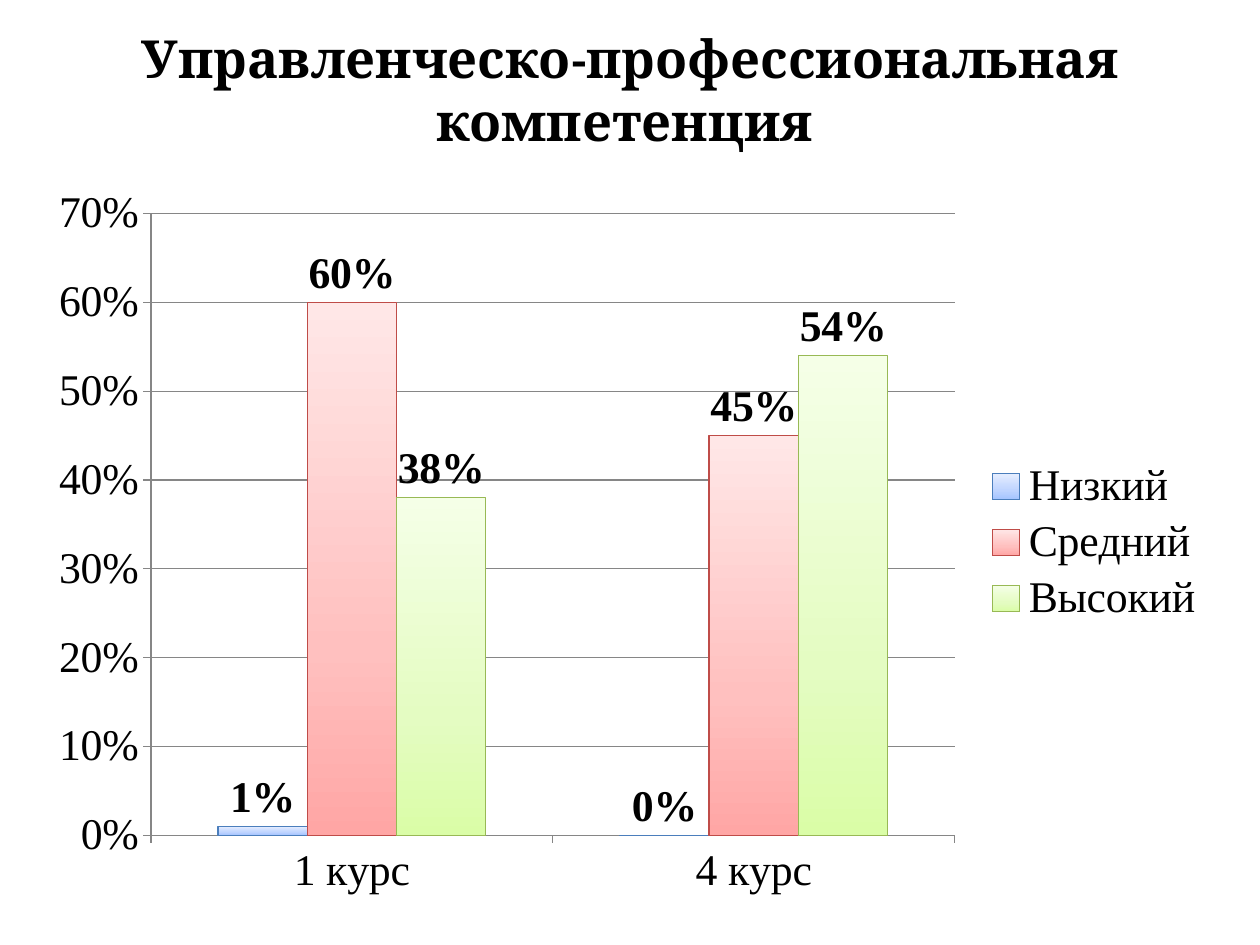
from lxml import etree
from pptx import Presentation
from pptx.chart.data import CategoryChartData
from pptx.dml.color import RGBColor
from pptx.enum.chart import XL_CHART_TYPE, XL_LABEL_POSITION, XL_LEGEND_POSITION, XL_TICK_MARK
from pptx.enum.text import MSO_ANCHOR, PP_ALIGN
from pptx.oxml import parse_xml
from pptx.oxml.ns import nsdecls, qn
from pptx.util import Inches, Pt

COLUMNS = XL_CHART_TYPE.COLUMN_CLUSTERED
RIGHT = XL_LEGEND_POSITION.RIGHT
OUTSIDE_END = XL_LABEL_POSITION.OUTSIDE_END
TICK_OUT = XL_TICK_MARK.OUTSIDE
CENTER = PP_ALIGN.CENTER
MIDDLE = MSO_ANCHOR.MIDDLE

COLORS = {"text": "000000", "back": "FFFFFF", "axis": "868686"}
TITLE = ["Управленческо-профессиональная", "компетенция "]
COURSES = ["1 курс", "4 курс"]
LEVELS = [
    {"name": "Низкий ", "values": (0.01, 0), "line": "4B7EBC",
     "stops": ("A4C4FF", "BFD4FF", "E6EEFF")},
    {"name": "Средний ", "values": (0.6, 0.45), "line": "BF4C48",
     "stops": ("FFA6A5", "FFC0BF", "FFE7E7")},
    {"name": "Высокий", "values": (0.38, 0.54), "line": "98B955",
     "stops": ("DAFDA7", "E4FCC2", "F5FFE7")},
]
STOP_POSITIONS = (0, 35, 100)
LEFT, WIDTH = Inches(0.28), Inches(9.45)


def rgb(name):
    return RGBColor.from_string(COLORS.get(name, name))


def set_font(font, size, name, color="text", bold=False):
    font.size, font.name, font.bold = Pt(size), name, bold
    font.color.rgb = rgb(color)


def add_text(p, text, **fmt):
    r = p.add_run()
    r.text = text
    set_font(r.font, **fmt)


def set_line(line, color):
    line.color.rgb = rgb(color)
    line.width = Pt(0.75)


def set_gradient(series, stops):
    """Fill the columns with a gradient that rises from the first stop."""
    fill = series.format.fill
    fill.gradient()
    fill.gradient_angle = 90
    gs_list = series._element.find(".//" + qn("a:gsLst"))
    for gs in list(gs_list):
        gs_list.remove(gs)
    for position, color in zip(STOP_POSITIONS, stops):
        gs = etree.SubElement(gs_list, qn("a:gs"), pos=str(position * 1000))
        etree.SubElement(gs, qn("a:srgbClr"), val=color)


def add_title(s):
    sp = s.shapes.title
    sp.left, sp.top, sp.width, sp.height = LEFT, Inches(0.15), WIDTH, Inches(1.11)
    sp.fill.solid()
    sp.fill.fore_color.rgb = rgb("back")
    color = sp._element.spPr.find(".//" + qn("a:srgbClr"))
    etree.SubElement(color, qn("a:alpha"), val="70000")
    tf = sp.text_frame
    tf.word_wrap = True
    tf.vertical_anchor = MIDDLE
    for i, text in enumerate(TITLE):
        p = tf.add_paragraph() if i else tf.paragraphs[0]
        p.alignment = CENTER
        add_text(p, text, size=30, name="Cambria", bold=True)


def add_level_chart(s):
    data = CategoryChartData(number_format="0%")
    data.categories = COURSES
    for level in LEVELS:
        data.add_series(level["name"], level["values"])
    chart = s.shapes.add_chart(COLUMNS, LEFT, Inches(1.39), WIDTH, Inches(5.83), data).chart
    set_font(chart.font, 25, "Times New Roman")
    chart.has_title = False
    chart.has_legend = True
    chart.legend.position = RIGHT
    chart.legend.include_in_layout = False

    plot = chart.plots[0]
    plot.gap_width = 150
    plot.overlap = 0
    plot.vary_by_categories = False
    for series, level in zip(plot.series, LEVELS):
        set_gradient(series, level["stops"])
        set_line(series.format.line, level["line"])
        labels = series.data_labels
        labels.show_value = True
        labels.position = OUTSIDE_END
        labels.number_format, labels.number_format_is_linked = "0%", False
        set_font(labels.font, 25, "Times New Roman", bold=True)

    axis = chart.value_axis
    axis.minimum_scale, axis.maximum_scale, axis.major_unit = 0, 0.7, 0.1
    axis.tick_labels.number_format = "0%"
    axis.tick_labels.number_format_is_linked = False
    set_line(axis.major_gridlines.format.line, "axis")
    for ax in (axis, chart.category_axis):
        ax.major_tick_mark = TICK_OUT
        set_line(ax.format.line, "axis")

    background = parse_xml(
        f'<c:spPr {nsdecls("c", "a")}><a:solidFill><a:srgbClr val="{COLORS["back"]}">'
        '<a:alpha val="50000"/></a:srgbClr></a:solidFill><a:ln><a:noFill/></a:ln></c:spPr>')
    chart._chartSpace.find(qn("c:chart")).addnext(background)


def main():
    prs = Presentation()
    prs.slide_width, prs.slide_height = Inches(10), Inches(7.5)
    s = prs.slides.add_slide(prs.slide_layouts[5])
    add_level_chart(s)
    add_title(s)
    prs.save("out.pptx")


if __name__ == "__main__":
    main()
